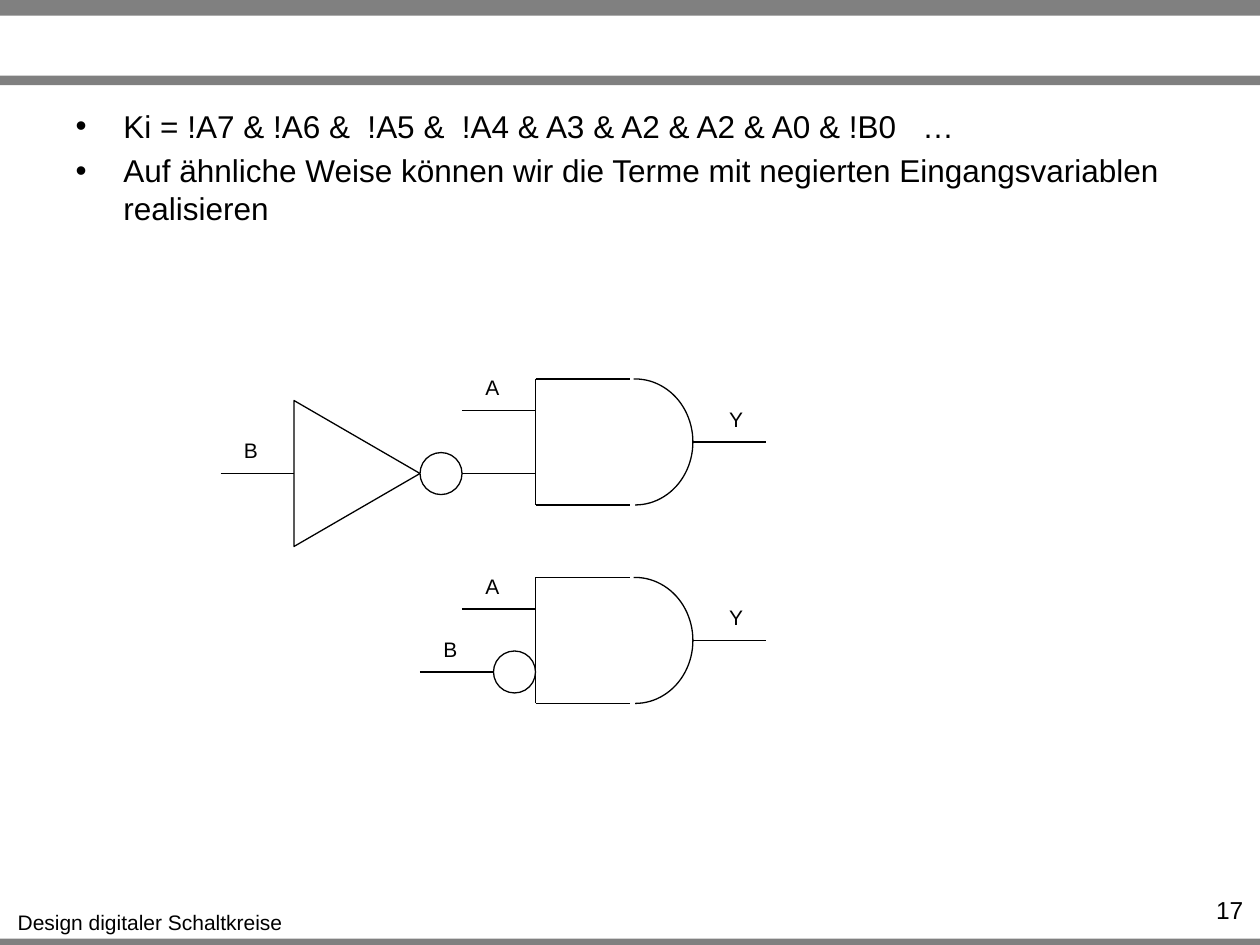
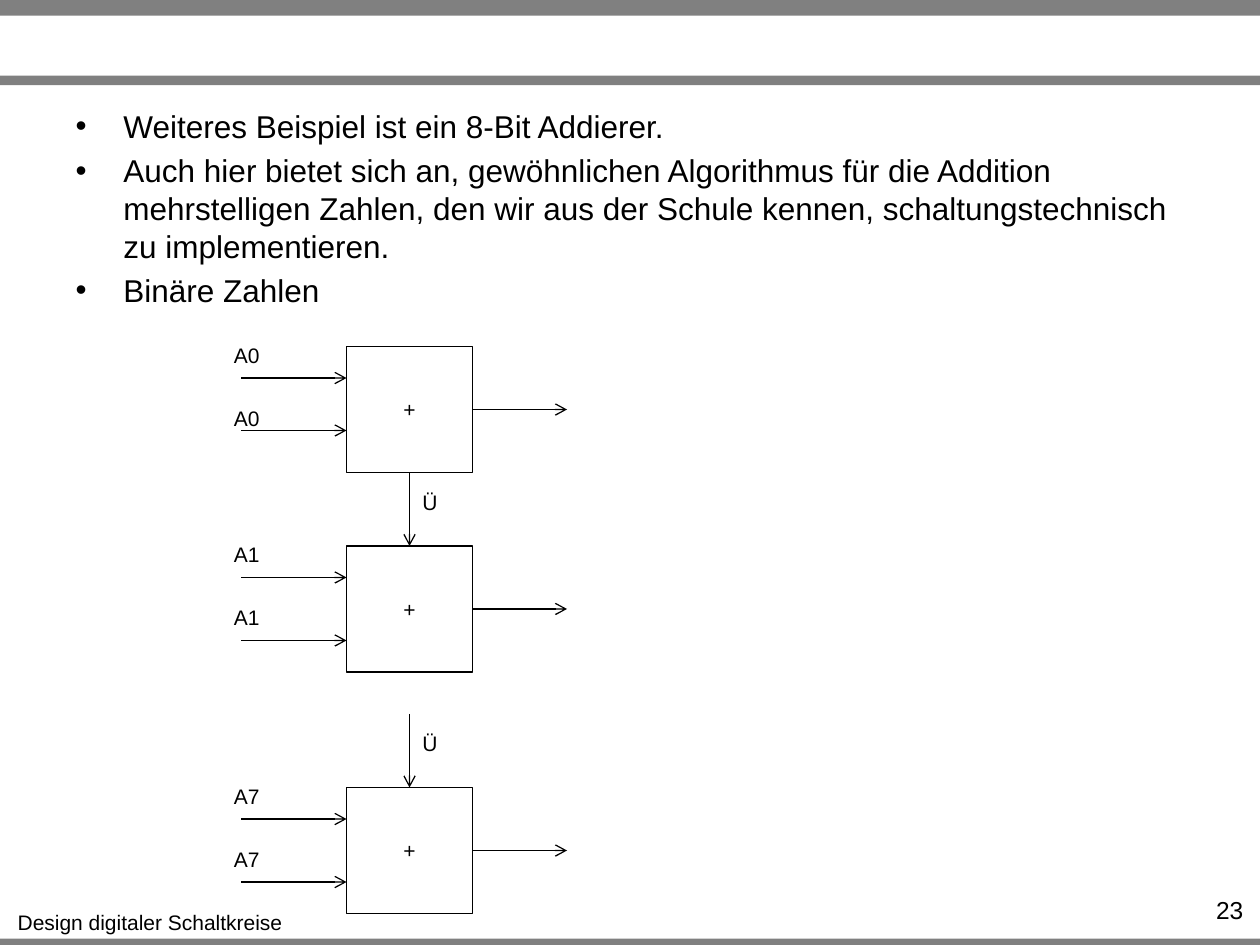
from lxml import etree
from pptx import Presentation
from pptx import util as u
from pptx.dml.color import RGBColor
from pptx.enum import shapes, text
from pptx.oxml.ns import qn

BLACK, WHITE, GREY = "000000", "FFFFFF", "808080"
FONT = "Arial"
COLUMNS, ROWS = 120, 90  # twelve grid cells to the inch
CELL = u.Inches(10) // COLUMNS
FOOTER = "Design digitaler Schaltkreise"
BANDS = [(0, 1.5), (7.2, 0.9), (89.4, 0.6)]  # top row, height

GATE_HEIGHT = 12
BUBBLE = 4
ADDER = 12


def grid(*cells):
    return [round(cell * CELL) for cell in cells]


def color(target, value):
    target.rgb = RGBColor.from_string(value)


def style_font(paragraph, size):
    paragraph.font.size = u.Pt(size)
    paragraph.font.name = FONT
    color(paragraph.font.color, BLACK)


def add_outline(slide, kind, x, y, width, height, fill=None):
    """Preset shape with a thin black line."""
    shape = slide.shapes.add_shape(kind, *grid(x, y, width, height))
    shape.shadow.inherit = False
    if fill:
        shape.fill.solid()
        color(shape.fill.fore_color, fill)
    else:
        shape.fill.background()
    color(shape.line.color, BLACK)
    shape.line.width = u.Pt(0.75)
    return shape


def add_text(slide, words, x, y, width, height, size=12,
             align=text.PP_ALIGN.CENTER, wrap=False):
    box = slide.shapes.add_textbox(*grid(x, y, width, height))
    box.text_frame.word_wrap = wrap
    paragraph = box.text_frame.paragraphs[0]
    paragraph.text = words
    paragraph.alignment = align
    style_font(paragraph, size)


def add_label(slide, words, center, top):
    width = 2.5 + 1.2 * len(words)
    add_text(slide, words, center - width / 2, top, width, 3.6)


def add_wire(slide, x1, y1, x2, y2, arrow=False):
    wire = slide.shapes.add_connector(
        shapes.MSO_CONNECTOR.STRAIGHT, *grid(x1, y1, x2, y2))
    color(wire.line.color, BLACK)
    wire.line.width = u.Pt(0.75)
    if arrow:
        etree.SubElement(wire.line._get_or_add_ln(), qn("a:tailEnd"), type="arrow")
    etree.SubElement(wire._element.spPr, qn("a:effectLst"))


def add_signal(slide, words, x, y, length, offset=2.9):
    """Horizontal wire with its name above it."""
    add_wire(slide, x, y, x + length, y)
    add_label(slide, words, x + offset, y - 4)


def add_page(prs, number, bullets):
    """Slide with bands, footer, page number and bullet list."""
    slide = prs.slides.add_slide(prs.slide_layouts[1])
    title = slide.shapes.title._element
    title.getparent().remove(title)

    for top, height in BANDS:
        band = slide.shapes.add_shape(
            shapes.MSO_SHAPE.RECTANGLE, *grid(0, top, COLUMNS, height))
        band.shadow.inherit = False
        band.fill.solid()
        color(band.fill.fore_color, GREY)
        band.line.fill.background()
    add_text(slide, FOOTER, 0.4, 86, 27.8, 3.6)
    add_text(slide, str(number), 109.2, 84.7, 10.4, 2.9, size=14,
             align=text.PP_ALIGN.RIGHT, wrap=True)

    # Bullet list
    body = slide.placeholders[1]
    body.left, body.top, body.width, body.height = grid(6, 9.6, 108, 25.4)
    frame = body.text_frame
    frame.auto_size = text.MSO_AUTO_SIZE.NONE
    frame.text = "\n".join(bullets)
    for index, paragraph in enumerate(frame.paragraphs):
        properties = paragraph._p.get_or_add_pPr()
        properties.set("marL", str(u.Inches(0.38)))
        properties.set("indent", str(-u.Inches(0.38)))
        etree.SubElement(properties, qn("a:buChar"), char="•")
        paragraph.space_before = u.Pt(3.6 if index else 0)
        style_font(paragraph, 18)
    return slide


def add_and_gate(slide, x, y):
    """AND gate with input A and output Y."""
    bottom = y + GATE_HEIGHT
    add_wire(slide, x, y, x, bottom)
    for edge in (y, bottom):
        add_wire(slide, x, edge, x + 9, edge)
    arc = add_outline(slide, shapes.MSO_SHAPE.ARC, x + 4, y, 11, GATE_HEIGHT)
    arc.adjustments[0], arc.adjustments[1] = 161.1, 54
    add_signal(slide, "A", x - 7, y + 3, 7)
    add_signal(slide, "Y", x + 15, y + 6, 7, offset=4.1)


def add_bubble(slide, x, y):
    """Negation circle whose left end is at x and middle at y."""
    add_outline(slide, shapes.MSO_SHAPE.OVAL, x, y - BUBBLE / 2,
                BUBBLE, BUBBLE, WHITE)


def add_inverter(slide, x, y):
    """Inverter with input B, from the triangle's base at x."""
    length, base = 12, 13.9
    add_signal(slide, "B", x - 7, y, 7)
    triangle = add_outline(
        slide, shapes.MSO_SHAPE.ISOSCELES_TRIANGLE,
        x + (length - base) / 2, y - length / 2, base, length)
    triangle.rotation = 90
    add_bubble(slide, x + length, y)
    add_wire(slide, x + length + BUBBLE, y, x + length + BUBBLE + 7, y)


def add_adder(slide, x, y, bit, second_input=9, carry=True):
    """One-bit adder with two inputs, a sum and an incoming carry."""
    block = add_outline(slide, shapes.MSO_SHAPE.RECTANGLE, x, y, ADDER, ADDER)
    frame = block.text_frame
    frame.vertical_anchor = text.MSO_ANCHOR.MIDDLE
    plus = frame.paragraphs[0]
    plus.text = "+"
    plus.alignment = text.PP_ALIGN.CENTER
    style_font(plus, 12)

    for row, label_row in ((3, -1), (second_input, 5)):
        add_wire(slide, x - 10, y + row, x, y + row, arrow=True)
        add_label(slide, f"A{bit}", x - 9.5, y + label_row)
    middle = x + ADDER / 2
    add_wire(slide, x + ADDER, y + 6, x + ADDER + 9, y + 6, arrow=True)
    if carry:
        add_wire(slide, middle, y - 7, middle, y, arrow=True)
        add_label(slide, "Ü", middle + 1.9, y - 6)


def build_negated_inputs(prs):
    slide = add_page(prs, 17, [
        "Ki = !A7 & !A6 &  !A5 &  !A4 & A3 & A2 & A2 & A0 & !B0   …",
        "Auf ähnliche Weise können wir die Terme mit negierten "
        "Eingangsvariablen realisieren",
    ])
    gate_x, upper, lower = 51, 36.1, 55
    # Separate inverter in front of the gate
    add_and_gate(slide, gate_x, upper)
    add_inverter(slide, gate_x - 23, upper + 9)
    # Short form: negation circle at the input
    add_and_gate(slide, gate_x, lower)
    add_signal(slide, "B", gate_x - 11, lower + 9, 7)
    add_bubble(slide, gate_x - BUBBLE, lower + 9)


def build_ripple_adder(prs):
    slide = add_page(prs, 23, [
        "Weiteres Beispiel ist ein 8-Bit Addierer.",
        "Auch hier bietet sich an, gewöhnlichen Algorithmus für die Addition "
        "mehrstelligen Zahlen, den wir aus der Schule kennen, "
        "schaltungstechnisch zu implementieren.",
        "Binäre Zahlen",
    ])
    adder_x = 33
    add_adder(slide, adder_x, 33, 0, second_input=8, carry=False)
    add_adder(slide, adder_x, 52, 1)
    add_adder(slide, adder_x, 75, 7)


def main():
    prs = Presentation()
    prs.slide_width, prs.slide_height = grid(COLUMNS, ROWS)
    build_negated_inputs(prs)
    build_ripple_adder(prs)
    prs.save("out.pptx")


if __name__ == "__main__":
    main()
